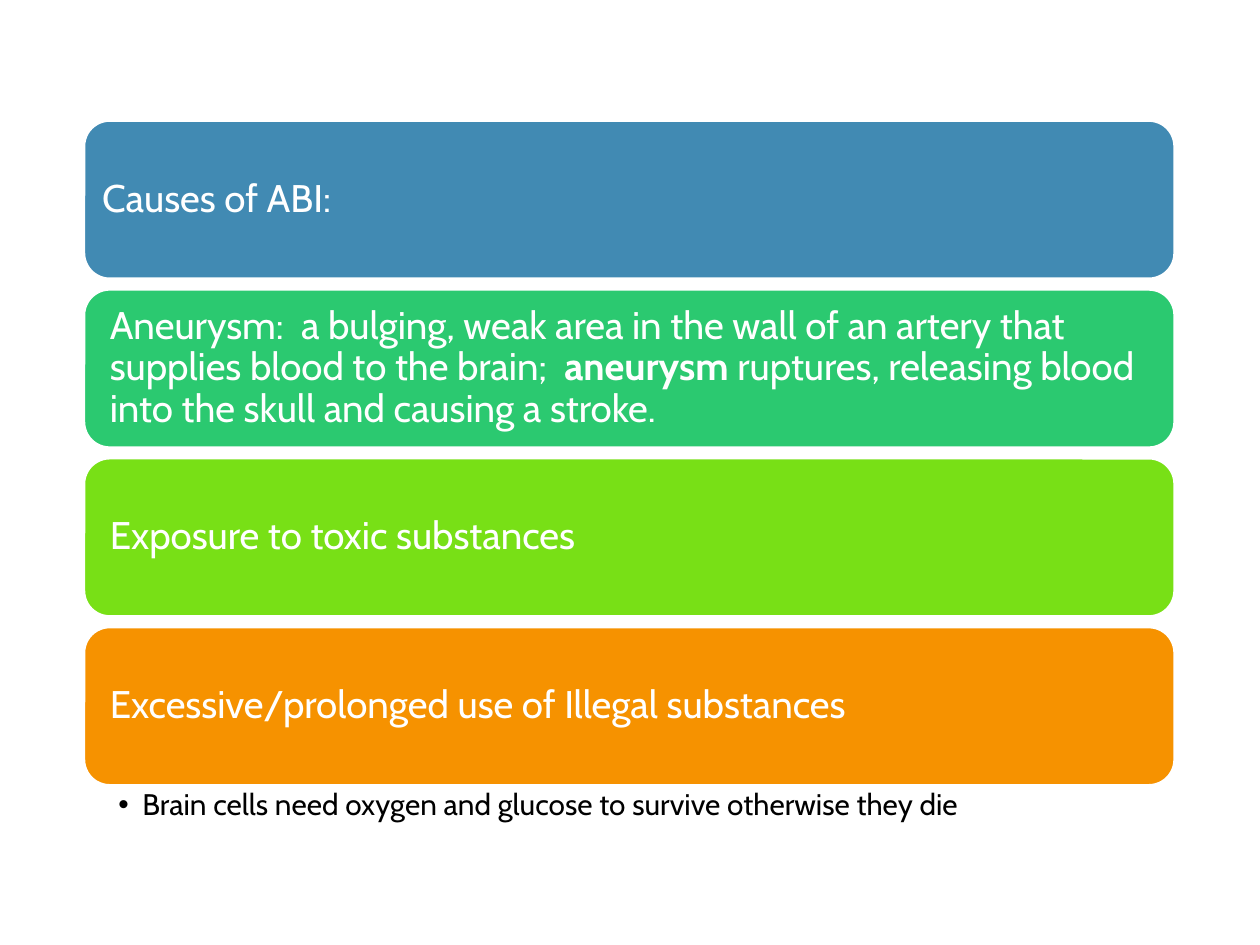
from lxml import etree
from pptx import Presentation
from pptx import util as u
from pptx.dml.color import RGBColor
from pptx.enum import shapes, text
from pptx.oxml.ns import qn

COLORS = {
    "blue": "418AB3",
    "green": "2BC970",
    "lime": "78E016",
    "orange": "F69200",
    "white": "FFFFFF",
    "black": "000000",
}
LEFT, TOP, WIDTH = 0.66, 0.95, 8.67
CARD_HEIGHT, CARD_GAP = 1.27, 0.07
CARD_STEP = CARD_HEIGHT + CARD_GAP
CARD_INSET = (0.15, 0.15, 0.15, 0.15)

CAUSES = [
    ("green", ["Aneurysm:  a bulging, weak area in the wall of an artery that "
               "supplies blood to the brain;  ",
               "aneurysm",
               " ruptures, releasing blood into the skull and causing a stroke."]),
    ("lime", ["Exposure to toxic substances"]),
    ("orange", ["Excessive/prolonged use of Illegal substances"]),
]


class CauseSlide:
    font = "Cabin"
    card_size = 22
    note_size = 17

    def __init__(self, prs):
        self.slide = prs.slides.add_slide(prs.slide_layouts[1])

    def color(self, name):
        return RGBColor.from_string(COLORS[name])

    def place(self, shape, top, height):
        shape.left, shape.top = u.Inches(LEFT), u.Inches(top)
        shape.width, shape.height = u.Inches(WIDTH), u.Inches(height)

    def set_text(self, shape, parts, size, color, inset, anchor):
        """Fill the shape with one paragraph; every second part is bold."""
        frame = shape.text_frame
        frame.word_wrap = True
        frame.auto_size = text.MSO_AUTO_SIZE.NONE
        frame.vertical_anchor = anchor
        (frame.margin_left, frame.margin_top,
         frame.margin_right, frame.margin_bottom) = map(u.Inches, inset)
        paragraph = frame.paragraphs[0]
        paragraph.alignment = text.PP_ALIGN.LEFT
        paragraph.line_spacing = 0.9
        paragraph.space_before = u.Pt(0)
        for index, part in enumerate(parts):
            run = paragraph.add_run()
            run.text = part
            run.font.name = self.font
            run.font.size = u.Pt(size)
            run.font.bold = index % 2 == 1
            run.font.color.rgb = self.color(color)
        return paragraph

    def set_card_text(self, shape, parts):
        self.set_text(shape, parts, self.card_size, "white", CARD_INSET,
                      text.MSO_ANCHOR.MIDDLE)

    def card(self, row, fill):
        card = self.slide.shapes.add_shape(
            shapes.MSO_SHAPE.ROUNDED_RECTANGLE, 0, 0, 0, 0)
        self.place(card, TOP + row * CARD_STEP, CARD_HEIGHT)
        card.shadow.inherit = False
        card.fill.solid()
        card.fill.fore_color.rgb = self.color(fill)
        card.line.color.rgb = self.color("white")
        card.line.width = u.Pt(2.5)
        return card

    def title(self, heading, fill):
        """Put the title placeholder in front of the first card."""
        card = self.card(0, fill)
        title = self.slide.shapes.title
        self.place(title, TOP, CARD_HEIGHT)
        card._element.addnext(title._element)
        self.set_card_text(title, [heading])

    def note(self, line, top):
        body = self.slide.placeholders[1]
        self.place(body, top, 0.4)
        paragraph = self.set_text(body, [line], self.note_size, "black",
                                  (0.28, 0.03, 0.17, 0.03), text.MSO_ANCHOR.TOP)
        properties = paragraph._p.get_or_add_pPr()
        properties.set("marL", str(u.Inches(0.19)))
        properties.set("indent", str(u.Inches(-0.19)))
        etree.SubElement(properties, qn("a:buChar")).set("char", "•")


def main():
    prs = Presentation()
    prs.slide_width, prs.slide_height = u.Inches(10), u.Inches(7.5)
    causes = CauseSlide(prs)
    causes.title("Causes of ABI:", "blue")
    for row, (fill, parts) in enumerate(CAUSES, start=1):
        causes.set_card_text(causes.card(row, fill), parts)
    causes.note("Brain cells need oxygen and glucose to survive otherwise they die",
                TOP + len(CAUSES) * CARD_STEP + CARD_HEIGHT)
    prs.save("out.pptx")


if __name__ == "__main__":
    main()
